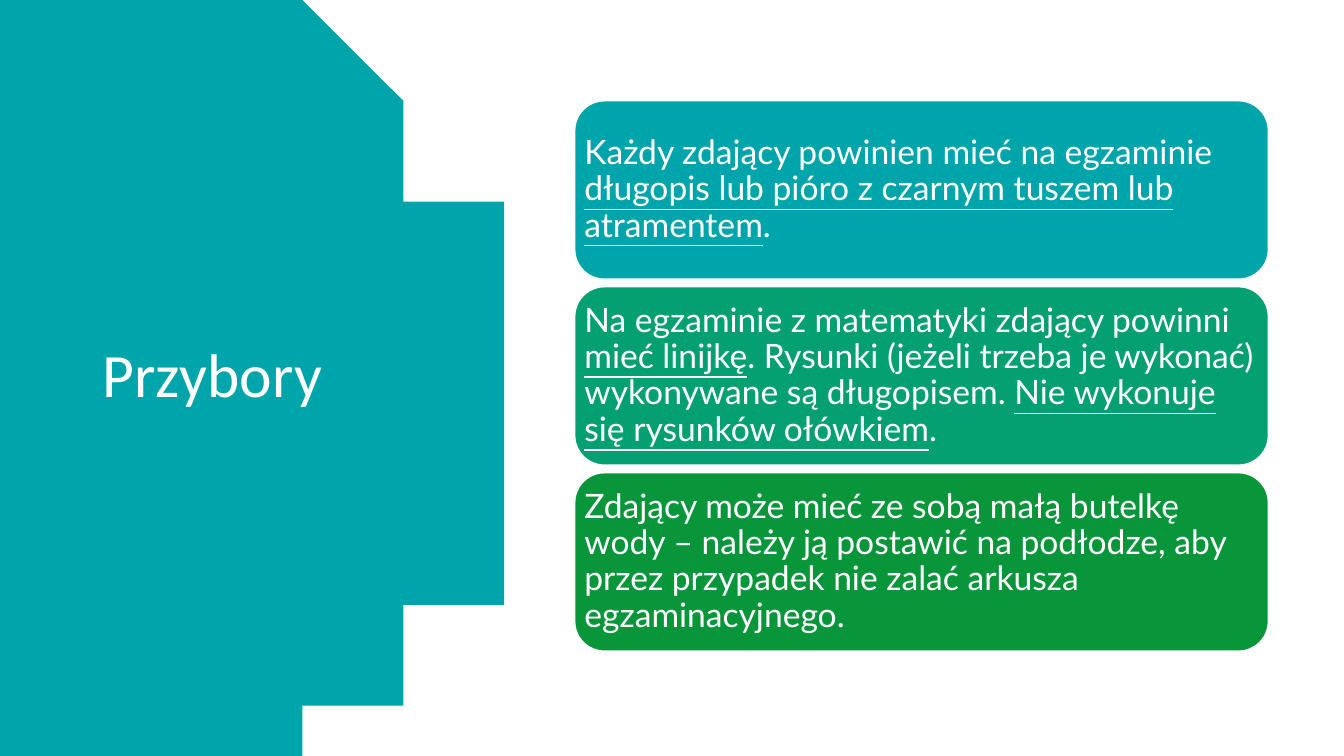
import math

from pptx import Presentation
from pptx import util as u
from pptx.dml.color import RGBColor
from pptx.enum import shapes, text

WHITE = "FFFFFF"
TEAL = "00A5AB"

# Each card: fill and (wording, underlined) spans
CARDS = [
    (TEAL, [
        ("Każdy zdający powinien mieć na egzaminie ", False),
        ("długopis lub pióro z czarnym tuszem lub atramentem", True),
        (".", False),
    ]),
    ("05A071", [
        ("Na egzaminie z matematyki zdający powinni ", False),
        ("mieć linijkę", True),
        (". Rysunki (jeżeli trzeba je wykonać) wykonywane są długopisem. ", False),
        ("Nie wykonuje się rysunków ołówkiem", True),
        (".", False),
    ]),
    ("09963B", [
        ("Zdający może mieć ze sobą małą butelkę wody – należy ją postawić "
         "na podłodze, aby przez przypadek nie zalać arkusza egzaminacyjnego.", False),
    ]),
]


def color(value):
    return RGBColor.from_string(value)


def paint(shape, fill, line=None):
    shape.shadow.inherit = False
    shape.fill.solid()
    shape.fill.fore_color.rgb = color(fill)
    if line:
        shape.line.color.rgb = color(line)
        shape.line.width = u.Pt(1)
    else:
        shape.line.fill.background()


def write(box, spans, font, size, side, edge):
    """Fill a box with one left-aligned, vertically centred paragraph."""
    frame = box.text_frame
    formats = {
        "word_wrap": True,
        "vertical_anchor": text.MSO_ANCHOR.MIDDLE,
        "margin_left": u.Inches(side),
        "margin_right": u.Inches(side),
        "margin_top": u.Inches(edge),
        "margin_bottom": u.Inches(edge),
    }
    for name, value in formats.items():
        setattr(frame, name, value)
    para = frame.paragraphs[0]
    para.alignment = text.PP_ALIGN.LEFT
    para.line_spacing = 0.9
    for wording, underlined in spans:
        span = para.add_run()
        span.text = wording
        for name, value in {"name": font, "size": u.Pt(size), "underline": underlined}.items():
            setattr(span.font, name, value)
        span.font.color.rgb = color(WHITE)


def add_panel(page):
    """Left panel closed by a circular arc over the full slide height."""
    half, center, radius = 3.75, 0.53, 4.4
    limit = math.asin(half / radius)
    steps = 80
    angles = [limit * (2 * i / steps - 1) for i in range(steps + 1)]
    arc = [(center + radius * math.cos(a), half + radius * math.sin(a)) for a in angles]
    builder = page.shapes.build_freeform(0, 0, scale=u.Inches(1))
    builder.add_line_segments(arc + [(0, 2 * half)], close=True)
    paint(builder.convert_to_shape(), TEAL)


def add_title(page, wording):
    box = page.shapes.add_textbox(
        u.Inches(0.92), u.Inches(0.7), u.Inches(3.23), u.Inches(6.09))
    write(box, [(wording, False)], "Calibri", 44, 0.1, 0.05)


def add_card(page, top, fill, spans):
    card = page.shapes.add_shape(
        shapes.MSO_SHAPE.ROUNDED_RECTANGLE,
        u.Inches(5.7), u.Inches(top), u.Inches(6.88), u.Inches(1.77))
    paint(card, fill, WHITE)
    # The rounded corners already inset the text area
    write(card, spans, "Lato", 24, 0.01, 0.01)


def main():
    deck = Presentation()
    deck.slide_width = u.Inches(13.33)
    deck.slide_height = u.Inches(7.5)
    page = deck.slides.add_slide(deck.slide_layouts[6])

    # Left side
    add_panel(page)
    add_title(page, "Przybory")

    # Stack of cards at an equal pitch
    for row, (fill, spans) in enumerate(CARDS):
        add_card(page, 1 + 1.845 * row, fill, spans)

    deck.save("out.pptx")


if __name__ == "__main__":
    main()
